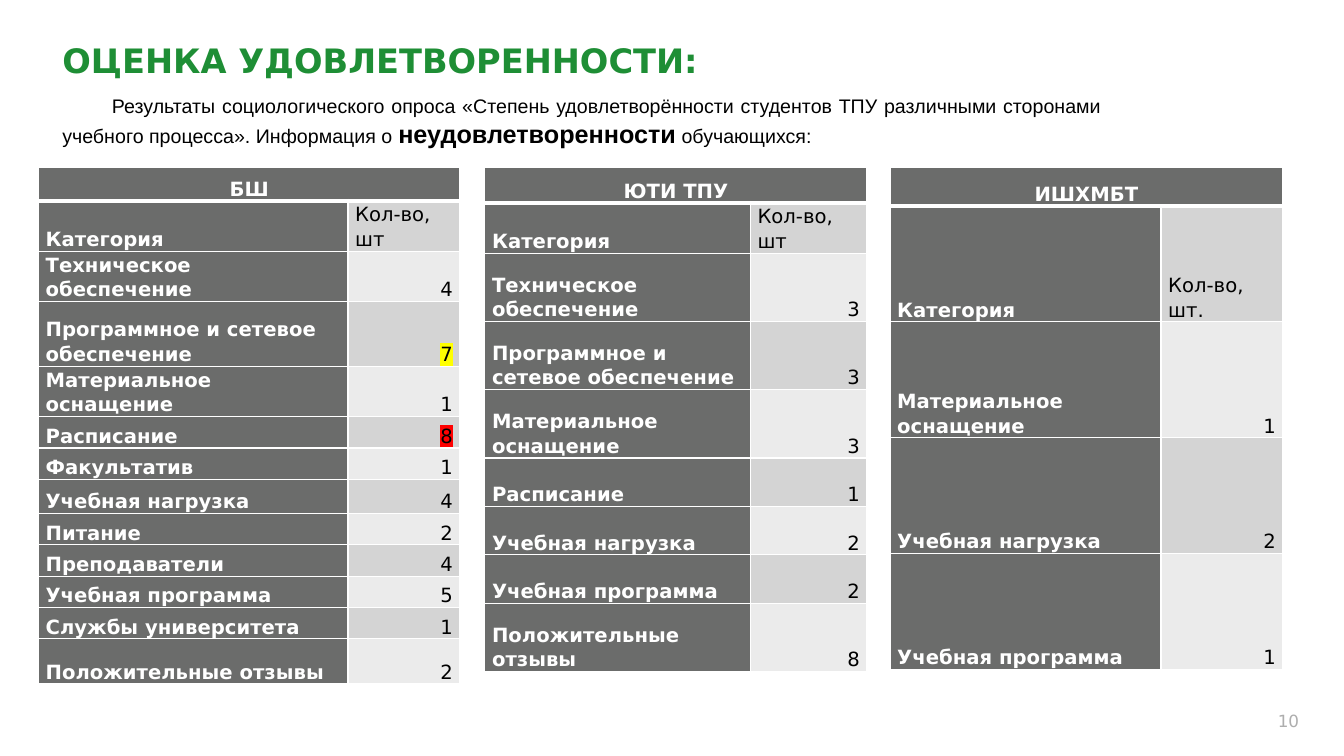
from dataclasses import dataclass

from lxml.etree import SubElement
from pptx import Presentation
from pptx.dml.color import RGBColor
from pptx.enum.text import MSO_ANCHOR as Anchor, MSO_AUTO_SIZE as AutoSize, PP_ALIGN as Align
from pptx.oxml.ns import qn
from pptx.util import Cm, Pt


@dataclass(frozen=True)
class Theme:
    heading_font: str = "DejaVu Sans"
    body_font: str = "Arial"
    title_size: int = 24
    emphasis_size: int = 18
    text_size: int = 14
    number_size: int = 12
    green: str = "1E8E35"
    black: str = "000000"
    white: str = "FFFFFF"
    dark: str = "6B6C6B"
    bands: tuple = ("D4D4D4", "EBEBEB")
    page_grey: str = "AEAEAE"
    yellow: str = "FFFF00"
    red: str = "FF0000"


THEME = Theme()

SURVEYS = [
    {
        "box": (0.97, 4.22), "columns": (7.8, 2.82), "name": "БШ", "unit": "Кол-во, шт",
        "heights": (0.84, 1.14, 1.14, 1.63, 1.14, 0.79, 0.79, 0.86, 0.79, 0.79, 0.79, 0.79, 1.14),
        "counts": {
            "Техническое обеспечение": 4, "Программное и сетевое обеспечение": 7,
            "Материальное оснащение": 1, "Расписание": 8, "Факультатив": 1,
            "Учебная нагрузка": 4, "Питание": 2, "Преподаватели": 4,
            "Учебная программа": 5, "Службы университета": 1, "Положительные отзывы": 2,
        },
        "highlights": {"Программное и сетевое обеспечение": THEME.yellow, "Расписание": THEME.red},
    },
    {
        "box": (12.22, 4.22), "columns": (6.69, 2.94), "name": "ЮТИ ТПУ", "unit": "Кол-во, шт",
        "heights": (0.89, 1.22, 1.72, 1.72, 1.72, 1.22, 1.22, 1.22, 1.72),
        "counts": {
            "Техническое обеспечение": 3, "Программное и сетевое обеспечение": 3,
            "Материальное оснащение": 3, "Расписание": 1, "Учебная нагрузка": 2,
            "Учебная программа": 2, "Положительные отзывы": 8,
        },
        "highlights": {},
    },
    {
        "box": (22.43, 4.22), "columns": (6.83, 3.07), "name": "ИШХМБТ", "unit": "Кол-во, шт.",
        "heights": (0.97, 2.92, 2.92, 2.92, 2.92),
        "counts": {"Материальное оснащение": 1, "Учебная нагрузка": 2, "Учебная программа": 1},
        "highlights": {},
    },
]


def set_font(font, name, size, color, bold=False):
    font.name = name
    font.size = Pt(size)
    font.bold = bold
    font.color.rgb = RGBColor.from_string(color)


def add_color(parent, tag, color):
    SubElement(SubElement(parent, qn(tag)), qn("a:srgbClr"), val=color)


def add_borders(cell, top, bottom):
    properties = cell._tc.get_or_add_tcPr()
    for tag, width in (("a:lnL", 1), ("a:lnR", 1), ("a:lnT", top), ("a:lnB", bottom)):
        line = SubElement(properties, qn(tag), w=str(Pt(width)))
        add_color(line, "a:solidFill", THEME.white)


def fill_cell(cell, text, fill, color, bold, align, highlight=None):
    cell.fill.solid()
    cell.fill.fore_color.rgb = RGBColor.from_string(fill)
    cell.vertical_anchor = Anchor.BOTTOM
    cell.margin_left = cell.margin_right = Cm(0.18)
    cell.margin_top = cell.margin_bottom = 0
    paragraph = cell.text_frame.paragraphs[0]
    paragraph.alignment = align
    paragraph.line_spacing = 1.07
    set_font(paragraph.font, THEME.heading_font, THEME.text_size, color, bold)
    run = paragraph.add_run()
    run.text = text
    if highlight:
        add_color(run._r.get_or_add_rPr(), "a:highlight", highlight)


def add_title(slide, left, top, width, height):
    title = slide.shapes.title
    title.left, title.top, title.width, title.height = map(Cm, (left, top, width, height))
    frame = title.text_frame
    frame.text = "ОЦЕНКА УДОВЛЕТВОРЕННОСТИ:"
    frame.auto_size = AutoSize.NONE
    frame.vertical_anchor = Anchor.MIDDLE
    paragraph = frame.paragraphs[0]
    paragraph.alignment = Align.LEFT
    paragraph.line_spacing = 0.9
    set_font(paragraph.font, THEME.heading_font, THEME.title_size, THEME.green, True)


def add_text_box(slide, left, top, width, height, align):
    """Add a wrapped, vertically centred box and return its paragraph."""
    box = slide.shapes.add_textbox(*map(Cm, (left, top, width, height)))
    frame = box.text_frame
    frame.word_wrap = True
    frame.vertical_anchor = Anchor.MIDDLE
    paragraph = frame.paragraphs[0]
    paragraph.alignment = align
    return paragraph


def add_introduction(slide, left, top, width, height):
    paragraph = add_text_box(slide, left, top, width, height, Align.JUSTIFY)
    paragraph._p.get_or_add_pPr().set("indent", str(Cm(1.25)))
    parts = [
        ("Результаты социологического опроса «Степень удовлетворённости студентов ТПУ "
         "различными сторонами учебного процесса». Информация о ", THEME.text_size, False),
        ("неудовлетворенности", THEME.emphasis_size, True),
        (" обучающихся:", THEME.text_size, False),
    ]
    for text, size, bold in parts:
        run = paragraph.add_run()
        run.text = text
        set_font(run.font, THEME.body_font, size, THEME.black, bold)


def add_page_number(slide, left, top, width, height):
    paragraph = add_text_box(slide, left, top, width, height, Align.RIGHT)
    paragraph.text = "10"
    set_font(paragraph.font, THEME.heading_font, THEME.number_size, THEME.page_grey)


def add_survey_table(slide, survey):
    left, top = survey["box"]
    columns, heights = survey["columns"], survey["heights"]
    frame = slide.shapes.add_table(len(heights), len(columns), Cm(left), Cm(top),
                                   Cm(sum(columns)), Cm(sum(heights)))
    table = frame.table
    for column, width in zip(table.columns, columns):
        column.width = Cm(width)
    for index, height in enumerate(heights):
        table.rows[index].height = Cm(height)
        for cell in table.rows[index].cells:
            add_borders(cell, 3 if index == 1 else 1, 3 if index == 0 else 1)

    header = table.cell(0, 0)
    header.merge(table.cell(0, 1))
    fill_cell(header, survey["name"], THEME.dark, THEME.white, True, Align.CENTER)
    rows = [("Категория", survey["unit"]), *survey["counts"].items()]
    for index, (category, value) in enumerate(rows):
        fill_cell(table.cell(index + 1, 0), category, THEME.dark, THEME.white, True, Align.LEFT)
        fill_cell(table.cell(index + 1, 1), str(value), THEME.bands[index % 2], THEME.black, False,
                  Align.RIGHT if index else Align.LEFT, survey["highlights"].get(category))


def main():
    presentation = Presentation()
    presentation.slide_width = Cm(33.87)
    presentation.slide_height = Cm(19.05)
    slide = presentation.slides.add_slide(presentation.slide_layouts[5])
    add_title(slide, 1.32, 0.74, 18.8, 1.68)
    add_introduction(slide, 1.32, 2.24, 26.7, 1.63)
    for survey in SURVEYS:
        add_survey_table(slide, survey)
    add_page_number(slide, 25.37, 17.65, 7.62, 1.02)
    presentation.save("out.pptx")


if __name__ == "__main__":
    main()
